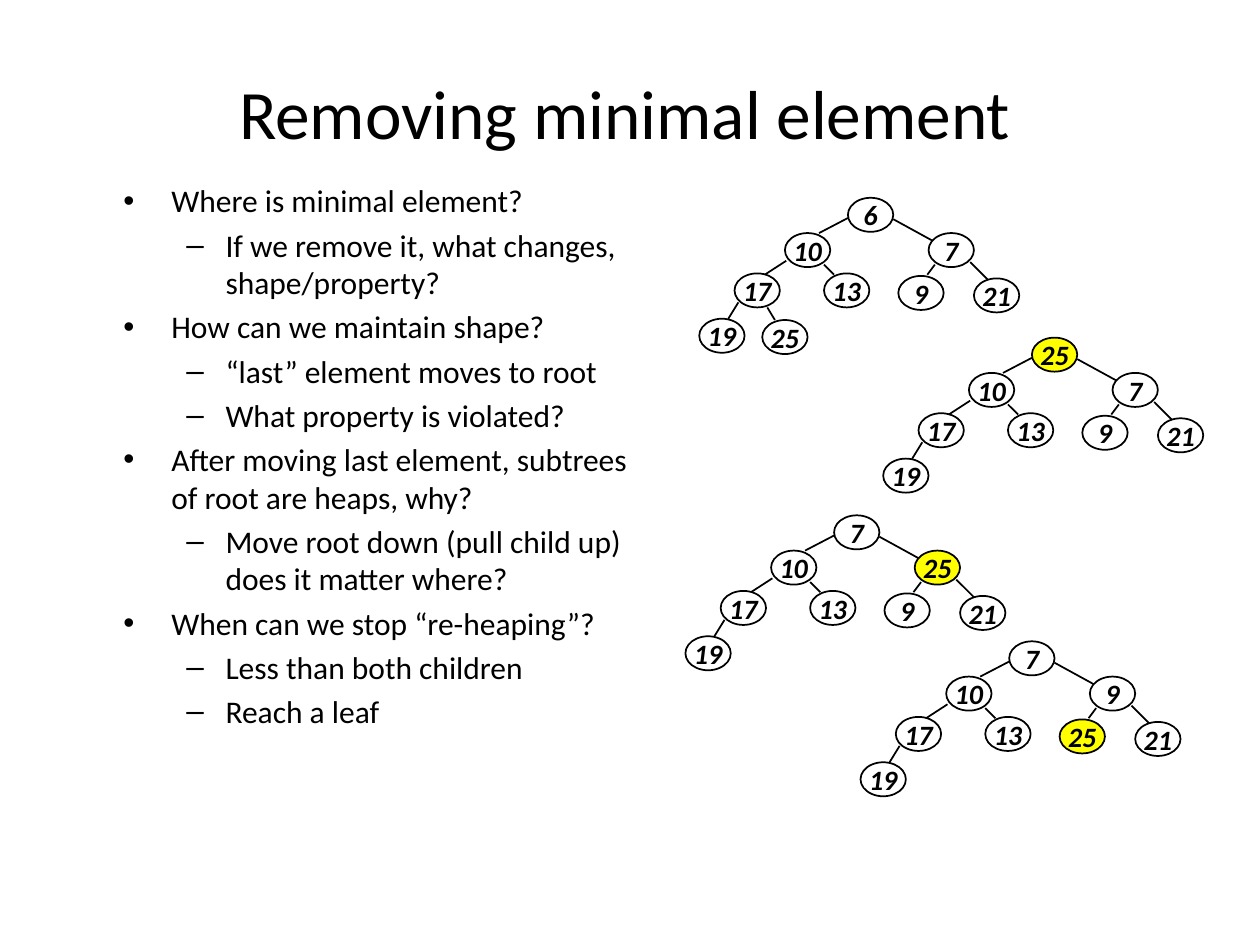
from dataclasses import dataclass

from pptx import Presentation
from pptx.dml.color import RGBColor
from pptx.enum.shapes import MSO_CONNECTOR, MSO_SHAPE
from pptx.enum.text import MSO_ANCHOR, MSO_AUTO_SIZE, PP_ALIGN
from pptx.oxml import parse_xml
from pptx.oxml.ns import nsdecls
from pptx.util import Inches, Pt


@dataclass(frozen=True)
class Theme:
    font: str = "Calibri"
    ink: RGBColor = RGBColor(0, 0, 0)
    highlight: RGBColor = RGBColor(255, 255, 0)
    title_size: Pt = Pt(39.6)
    body_size: Pt = Pt(18)
    node_size: Pt = Pt(16)
    line_width: Pt = Pt(1)


theme = Theme()


def style_font(paragraph, size):
    paragraph.font.name = theme.font
    paragraph.font.size = size
    paragraph.font.color.rgb = theme.ink


def place(shape, left, top, width, height):
    shape.left, shape.top = Inches(left), Inches(top)
    shape.width, shape.height = Inches(width), Inches(height)
    shape.text_frame.auto_size = MSO_AUTO_SIZE.NONE


presentation = Presentation()
presentation.slide_width = Inches(10)
presentation.slide_height = Inches(7.5)
slide = presentation.slides.add_slide(presentation.slide_layouts[1])

title = slide.shapes.title
place(title, 0.83, 0.5, 8.26, 0.78)
title.text_frame.text = "Removing minimal element"
title.text_frame.vertical_anchor = MSO_ANCHOR.MIDDLE
title.text_frame.paragraphs[0].alignment = PP_ALIGN.CENTER
style_font(title.text_frame.paragraphs[0], theme.title_size)

questions = [
    (0, "Where is minimal element?"),
    (1, "If we remove it, what changes, shape/property?"),
    (0, "How can we maintain shape?"),
    (1, "“last” element moves to root"),
    (1, "What property is violated?"),
    (0, "After moving last element, subtrees of root are heaps, why?"),
    (1, "Move root down (pull child up) does it matter where?"),
    (0, "When can we stop “re-heaping”?"),
    (1, "Less than both children"),
    (1, "Reach a leaf"),
]
indents = [(0.38, -0.38), (0.81, -0.31)]

body = slide.placeholders[1]
place(body, 0.88, 1.39, 4.28, 4.92)
body.text_frame.text = "\n".join(text for _, text in questions)
for paragraph, (level, _) in zip(body.text_frame.paragraphs, questions):
    paragraph.level = level
    style_font(paragraph, theme.body_size)
    margin, hanging = indents[level]
    properties = paragraph._p.get_or_add_pPr()
    properties.set("marL", str(Inches(margin)))
    properties.set("indent", str(Inches(hanging)))

node_width, node_height = 0.36, 0.27
node_offsets = [
    (0, 0),
    (-0.5, 0.28), (0.64, 0.28),
    (-0.9, 0.6), (-0.19, 0.6), (0.4, 0.62), (1, 0.64),
    (-1.18, 0.96), (-0.68, 0.97),
]
edges_to_children = [
    (0, 0.16, -0.23, 0.28), (0.36, 0.17, 0.67, 0.34),
    (-0.49, 0.5, -0.66, 0.61), (-0.19, 0.53, -0.11, 0.61),
    (0.69, 0.53, 0.63, 0.61), (0.97, 0.51, 1.11, 0.65),
    (-0.87, 0.83, -0.95, 0.96), (-0.64, 0.87, -0.58, 0.97),
]
heaps = [
    (6.73, 1.57, [6, 10, 7, 17, 13, 9, 21, 19, 25], None),
    (8.19, 2.68, [25, 10, 7, 17, 13, 9, 21, 19], 0),
    (6.62, 4.09, [7, 10, 25, 17, 13, 9, 21, 19], 2),
    (8.01, 5.09, [7, 10, 9, 17, 13, 25, 21, 19], 5),
]

for root_left, root_top, values, moved_index in heaps:
    heap = slide.shapes.add_group_shape()
    for x1, y1, x2, y2 in edges_to_children[:len(values) - 1]:
        edge = heap.shapes.add_connector(
            MSO_CONNECTOR.STRAIGHT,
            Inches(root_left + x1), Inches(root_top + y1),
            Inches(root_left + x2), Inches(root_top + y2),
        )
        edge.line.color.rgb = theme.ink
        edge.line.width = theme.line_width
        edge._element.spPr.append(parse_xml(f"<a:effectLst {nsdecls('a')}/>"))
    for index, (value, (dx, dy)) in enumerate(zip(values, node_offsets)):
        node = heap.shapes.add_shape(
            MSO_SHAPE.OVAL,
            Inches(root_left + dx), Inches(root_top + dy),
            Inches(node_width), Inches(node_height),
        )
        node.shadow.inherit = False
        if index == moved_index:
            node.fill.solid()
            node.fill.fore_color.rgb = theme.highlight
        else:
            node.fill.background()
        node.line.color.rgb = theme.ink
        node.line.width = theme.line_width
        frame = node.text_frame
        frame.word_wrap = False
        frame.vertical_anchor = MSO_ANCHOR.MIDDLE
        frame.text = str(value)
        paragraph = frame.paragraphs[0]
        paragraph.alignment = PP_ALIGN.CENTER
        style_font(paragraph, theme.node_size)
        paragraph.font.bold = True
        paragraph.font.italic = True

presentation.save("out.pptx")
